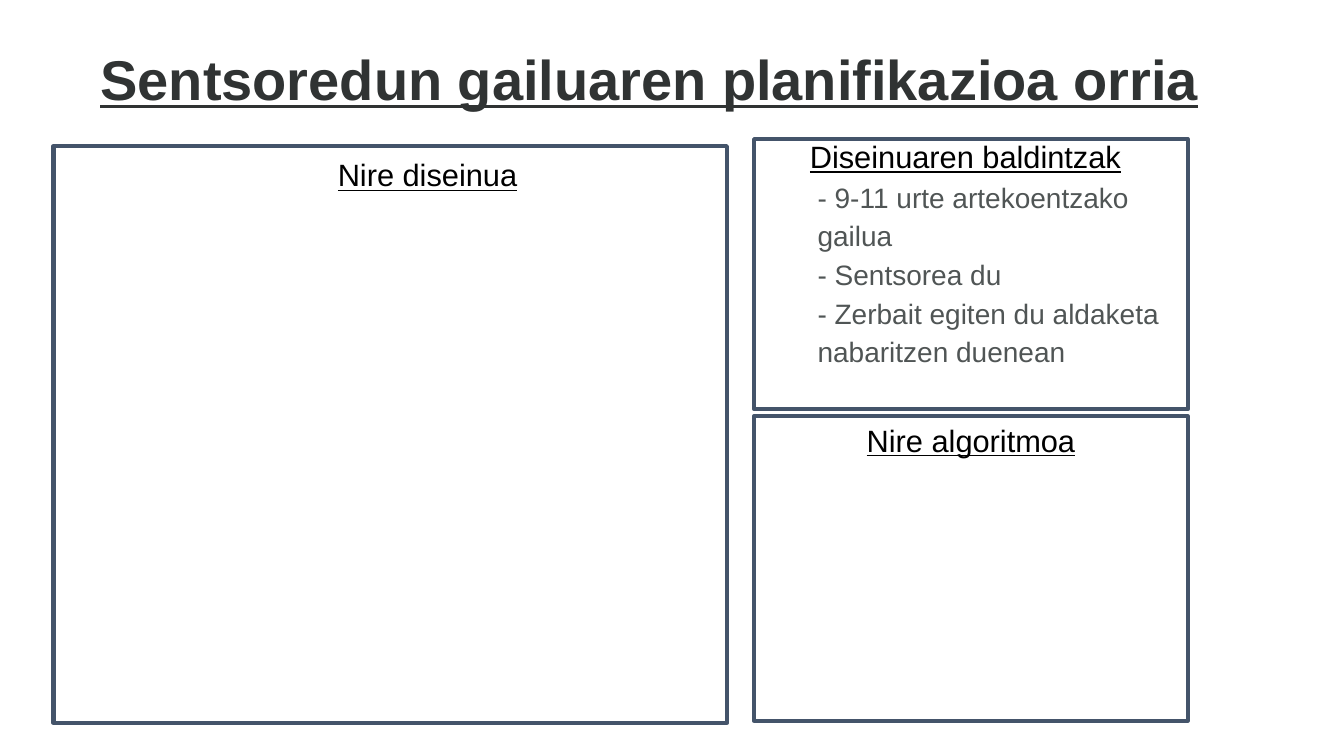
from lxml.etree import SubElement
from pptx import Presentation
from pptx.dml.color import RGBColor
from pptx.enum.shapes import MSO_SHAPE
from pptx.enum.text import MSO_ANCHOR, PP_ALIGN
from pptx.oxml.ns import qn
from pptx.util import Inches, Pt

TITLE = "Sentsoredun gailuaren planifikazioa orria"
TITLE_BOX = (0.9, 0.39, 11.08, 0.61)
# Frame, heading, text box, requirements under the heading
PANELS = [
    ((0.53, 1.45, 6.68, 5.72), "Nire diseinua", (2.33, 1.45, 3.82, 0.37), []),
    ((7.48, 4.13, 4.3, 3.02), "Nire algoritmoa", (7.72, 4.08, 3.82, 0.37), []),
    ((7.48, 1.38, 4.3, 2.68), "Diseinuaren baldintzak", (7.48, 1.27, 4.19, 2.4), [
        "- 9-11 urte artekoentzako gailua",
        "- Sentsorea du",
        "- Zerbait egiten du aldaketa nabaritzen duenean",
    ]),
]
FRAME_COLOR = "44546A"
TITLE_COLOR = "303333"
HEADING_COLOR = "000000"
BODY_COLOR = "505555"


def rgb(value):
    return RGBColor.from_string(value)


def inches(box):
    return [Inches(length) for length in box]


def format_frame(text_frame, margin):
    text_frame.word_wrap = True
    text_frame.vertical_anchor = MSO_ANCHOR.TOP
    text_frame.margin_left = text_frame.margin_right = Inches(margin)
    text_frame.margin_top = text_frame.margin_bottom = Inches(margin)


def write(paragraph, text, size, color, align, underline=False, bold=False):
    paragraph.text = text
    paragraph.alignment = align
    font = paragraph.font
    font.name, font.size, font.color.rgb = "Arial", Pt(size), rgb(color)
    font.underline, font.bold = underline, bold


def add_frame(slide, box):
    frame = slide.shapes.add_shape(MSO_SHAPE.RECTANGLE, *inches(box))
    frame.shadow.inherit = False
    frame.fill.background()
    frame.line.color.rgb = rgb(FRAME_COLOR)
    frame.line.width = Pt(3)
    SubElement(frame.line._get_or_add_ln(), qn("a:round"))


def add_panel_text(slide, heading, box, requirements):
    text_frame = slide.shapes.add_textbox(*inches(box)).text_frame
    format_frame(text_frame, 0.1)
    write(text_frame.paragraphs[0], heading, 22, HEADING_COLOR, PP_ALIGN.CENTER, underline=True)
    for requirement in requirements:
        paragraph = text_frame.add_paragraph()
        write(paragraph, requirement, 20, BODY_COLOR, PP_ALIGN.LEFT)
        paragraph.level = 1
        paragraph.line_spacing = 1.15
        properties = paragraph._p.get_or_add_pPr()
        properties.set("marL", str(Inches(0.53)))
        properties.set("indent", "0")


def main():
    presentation = Presentation()
    presentation.slide_width, presentation.slide_height = Inches(13.33), Inches(7.5)
    slide = presentation.slides.add_slide(presentation.slide_layouts[5])

    title = slide.shapes.title
    title.left, title.top, title.width, title.height = inches(TITLE_BOX)
    format_frame(title.text_frame, 0)
    paragraph = title.text_frame.paragraphs[0]
    write(paragraph, TITLE, 40, TITLE_COLOR, PP_ALIGN.CENTER, underline=True, bold=True)
    paragraph.line_spacing = 1.07

    for frame_box, *_ in PANELS:
        add_frame(slide, frame_box)
    for _, heading, text_box, requirements in PANELS:
        add_panel_text(slide, heading, text_box, requirements)

    presentation.save("out.pptx")


if __name__ == "__main__":
    main()
